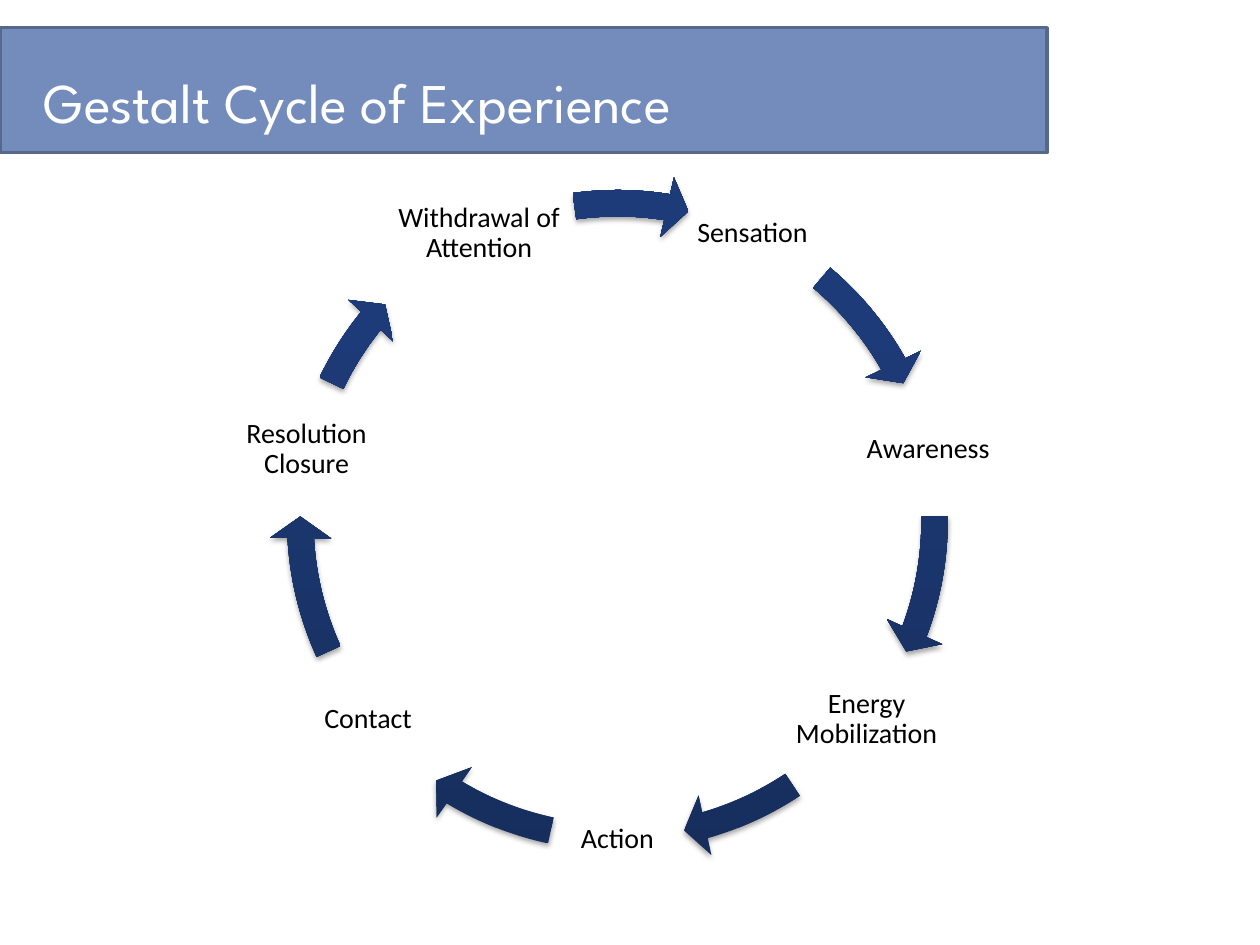
from dataclasses import dataclass
from math import cos, radians, sin

from lxml.etree import SubElement
from pptx import Presentation
from pptx.dml.color import RGBColor
from pptx.enum.shapes import MSO_SHAPE as Preset
from pptx.enum.text import MSO_ANCHOR as Anchor, MSO_AUTO_SIZE as AutoSize, PP_ALIGN as Align
from pptx.oxml import parse_xml
from pptx.oxml.ns import nsdecls, qn
from pptx.util import Inches, Pt


@dataclass(frozen=True)
class Theme:
    banner: str = "748CBC"
    banner_edge: str = "56688B"
    title: str = "FFFFFF"
    label: str = "000000"
    arrow_stops: tuple = ((0, "172E5C"), (80, "1D3B78"), (100, "1C3B7A"))
    title_font: str = "League Spartan"
    label_font: str = "Calibri"
    title_size: int = 32
    label_size: int = 16


THEME = Theme()
CENTER_X, CENTER_Y = 4.9, 4.13
LABEL_RADIUS = 2.53
LABEL_SIZE = (1.06, 1.06)
RING_SIZE = 5.52
DEGREE_STEP = 0.6

STAGES = [
    ("Sensation ", LABEL_SIZE, 310.09, 330.46),
    ("Awareness", LABEL_SIZE, 359.28, 20.51),
    ("Energy Mobilization", (1.53, 1.06), 56.46, 73.97),
    ("Action", LABEL_SIZE, 102.12, 120.97),
    ("Contact", LABEL_SIZE, 155.58, 176.8),
    ("Resolution Closure", LABEL_SIZE, 205.63, 219),
    ("Withdrawal of Attention", (1.51, 1.15), 262.22, 279.02),
]
ACTION_INDEX = 3


def add_text(shapes, text, left, top, width, height, *, font, size, color,
             align=Align.LEFT, anchor=Anchor.TOP, inset=None, wrap=True,
             line_spacing=None, auto_size=AutoSize.NONE):
    box = shapes.add_textbox(Inches(left), Inches(top), Inches(width), Inches(height))
    frame = box.text_frame
    frame.word_wrap = wrap
    frame.auto_size = auto_size
    frame.vertical_anchor = anchor
    if inset is not None:
        frame.margin_left = frame.margin_right = Inches(inset)
        frame.margin_top = frame.margin_bottom = Inches(inset)
    paragraph = frame.paragraphs[0]
    paragraph.alignment = align
    paragraph.line_spacing = line_spacing
    run = paragraph.add_run()
    run.text = text
    run.font.name = font
    run.font.size = Pt(size)
    run.font.color.rgb = RGBColor.from_string(color)


def add_banner(shapes):
    banner = shapes.add_shape(Preset.RECTANGLE, 0, Inches(0.22), Inches(8.31), Inches(0.99))
    banner.shadow.inherit = False
    banner.fill.solid()
    banner.fill.fore_color.rgb = RGBColor.from_string(THEME.banner)
    banner.line.color.rgb = RGBColor.from_string(THEME.banner_edge)
    banner.line.width = Pt(2)


def set_gradient(shape):
    stops = "".join(
        f'<a:gs pos="{position * 1000}"><a:srgbClr val="{color}"/></a:gs>'
        for position, color in THEME.arrow_stops
    )
    gradient = parse_xml(
        f'<a:gradFill {nsdecls("a")} rotWithShape="1"><a:gsLst>{stops}</a:gsLst>'
        '<a:lin ang="16200000" scaled="0"/></a:gradFill>'
    )
    shape.fill.background()
    properties = shape.element.spPr
    properties.replace(properties.find(qn("a:noFill")), gradient)


def set_shadow(shape):
    shape.shadow.inherit = False
    effects = shape.element.spPr.find(qn("a:effectLst"))
    shadow = SubElement(effects, qn("a:outerShdw"), blurRad=str(Pt(3.1)),
                        dist=str(Pt(1.8)), dir="5400000", rotWithShape="0")
    color = SubElement(shadow, qn("a:srgbClr"), val="000000")
    SubElement(color, qn("a:alpha"), val="35000")


def add_cycle_arrow(shapes, start, end):
    arrow = shapes.add_shape(
        Preset.CIRCULAR_ARROW,
        Inches(CENTER_X - RING_SIZE / 2), Inches(CENTER_Y - RING_SIZE / 2),
        Inches(RING_SIZE), Inches(RING_SIZE),
    )
    settings = (0.038, 3.91 * DEGREE_STEP, end * DEGREE_STEP, start * DEGREE_STEP, 0.044)
    for index, value in enumerate(settings):
        arrow.adjustments[index] = value
    set_gradient(arrow)
    arrow.line.fill.background()
    set_shadow(arrow)


def add_stage_label(shapes, index, name, size):
    angle = radians(90 + (index - ACTION_INDEX) * 360 / len(STAGES))
    width, height = size
    left = CENTER_X + LABEL_RADIUS * cos(angle) - width / 2
    top = CENTER_Y + LABEL_RADIUS * sin(angle) - height / 2
    add_text(shapes, name, left, top, width, height,
             font=THEME.label_font, size=THEME.label_size, color=THEME.label,
             align=Align.CENTER, anchor=Anchor.MIDDLE, inset=0.02, line_spacing=0.9)


def main():
    deck = Presentation()
    deck.slide_width, deck.slide_height = Inches(10), Inches(7.5)
    slide = deck.slides.add_slide(deck.slide_layouts[6])
    add_banner(slide.shapes)
    cycle = slide.shapes.add_group_shape()
    for index, (name, size, start, end) in enumerate(STAGES):
        add_stage_label(cycle.shapes, index, name, size)
        add_cycle_arrow(cycle.shapes, start, end)
    add_text(slide.shapes, "Gestalt Cycle of Experience", 0.25, 0.49, 5.85, 0.64,
             font=THEME.title_font, size=THEME.title_size, color=THEME.title,
             wrap=False, auto_size=AutoSize.SHAPE_TO_FIT_TEXT)
    deck.save("out.pptx")


if __name__ == "__main__":
    main()
